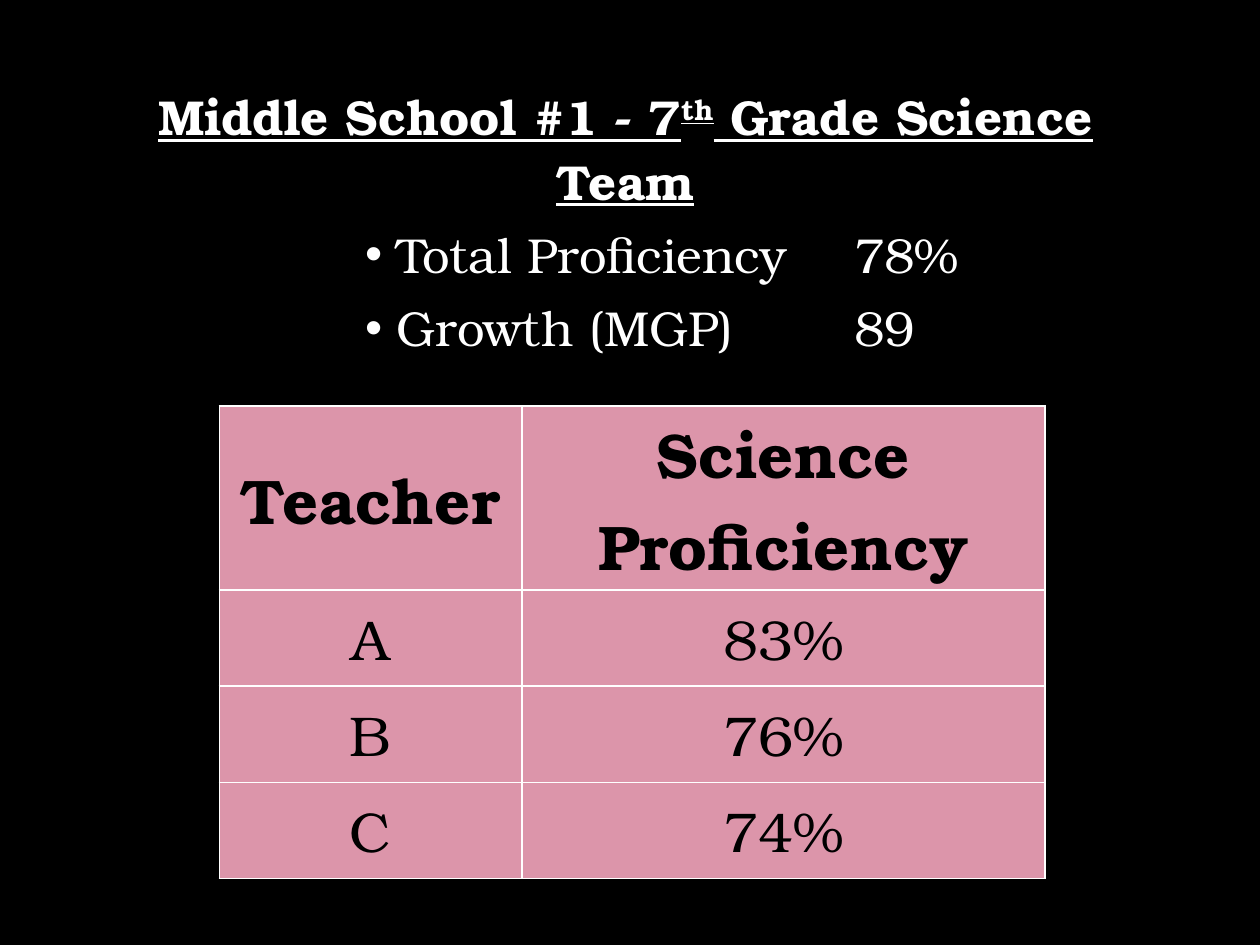
from lxml.etree import SubElement
from pptx import Presentation
from pptx.dml.color import RGBColor
from pptx.enum.text import MSO_ANCHOR, PP_ALIGN
from pptx.oxml.ns import qn
from pptx.util import Cm, Pt

# Content
TITLE = [("Middle School #1 - 7", False), ("th", True), (" Grade Science Team", False)]
RESULTS = [("Total Proficiency", "78%"), ("Growth (MGP)", "89")]
TEACHERS = [
    ("Teacher", "Science Proficiency"),
    ("A", "83%"),
    ("B", "76%"),
    ("C", "74%"),
]

# Style
FONT = "TeX Gyre Bonum"
BLACK = RGBColor(0x00, 0x00, 0x00)
WHITE = RGBColor(0xFF, 0xFF, 0xFF)
PINK = RGBColor(0xDC, 0x95, 0xAA)
COLUMN_WIDTHS = [Cm(6.1), Cm(10.55)]
HEADER_HEIGHT, ROW_HEIGHT = Cm(3.71), Cm(1.94)
BULLET_INDENT, BULLET_HANG = Cm(5.54), Cm(0.64)
# The value column, measured from the bullet text and from the box edge
VALUE_TABS = [Cm(9.23), Cm(14.77)]


def style(paragraph, size, color, bold=False, underline=False):
    font = paragraph.font
    font.name, font.size, font.bold, font.underline = FONT, Pt(size), bold, underline
    font.color.rgb = color


def add_bullet(paragraph):
    props = paragraph._p.get_or_add_pPr()
    props.set("marL", str(BULLET_INDENT))
    props.set("indent", str(-BULLET_HANG))
    SubElement(props, qn("a:buFont"), typeface="Arial")
    SubElement(props, qn("a:buChar"), char="•")
    tabs = SubElement(props, qn("a:tabLst"))
    for position in VALUE_TABS:
        SubElement(tabs, qn("a:tab"), pos=str(position), algn="l")


def add_borders(cell):
    props = cell._tc.get_or_add_tcPr()
    for side in ("lnL", "lnR", "lnT", "lnB"):
        line = SubElement(props, qn(f"a:{side}"), w=str(Pt(1)))
        fill = SubElement(line, qn("a:solidFill"))
        SubElement(fill, qn("a:srgbClr"), val=str(WHITE))


presentation = Presentation()
presentation.slide_width, presentation.slide_height = Cm(25.4), Cm(19.05)
slide = presentation.slides.add_slide(presentation.slide_layouts[6])
slide.background.fill.solid()
slide.background.fill.fore_color.rgb = BLACK

# Title
summary = slide.shapes.add_textbox(Cm(2.21), Cm(1.5), Cm(20.8), Cm(5.94)).text_frame
summary.word_wrap = True
title = summary.paragraphs[0]
title.alignment = PP_ALIGN.CENTER
title.line_spacing, title.space_before = 1.1, Pt(10)
style(title, 28, WHITE, bold=True, underline=True)
for words, raised in TITLE:
    run = title.add_run()
    run.text = words
    if raised:
        run._r.get_or_add_rPr().set("baseline", "30000")

# Team results
for label, value in RESULTS:
    result = summary.add_paragraph()
    result.line_spacing, result.space_before = 1.1, Pt(5)
    add_bullet(result)
    style(result, 28, WHITE)
    result.add_run().text = f"{label}\t{value}"

# Teacher table
row_heights = [HEADER_HEIGHT] + [ROW_HEIGHT] * (len(TEACHERS) - 1)
table = slide.shapes.add_table(
    len(TEACHERS), len(COLUMN_WIDTHS), Cm(4.42), Cm(8.18),
    sum(COLUMN_WIDTHS), sum(row_heights)).table
for column, width in zip(table.columns, COLUMN_WIDTHS):
    column.width = width
for r, (entries, height) in enumerate(zip(TEACHERS, row_heights)):
    table.rows[r].height = height
    for c, entry in enumerate(entries):
        cell = table.cell(r, c)
        cell.margin_left = cell.margin_right = cell.margin_top = cell.margin_bottom = 0
        cell.vertical_anchor = MSO_ANCHOR.MIDDLE
        add_borders(cell)
        cell.fill.solid()
        cell.fill.fore_color.rgb = PINK
        paragraph = cell.text_frame.paragraphs[0]
        paragraph.alignment = PP_ALIGN.CENTER
        style(paragraph, 36 if r == 0 else 32, BLACK, bold=r == 0)
        paragraph.add_run().text = entry

presentation.save("out.pptx")
